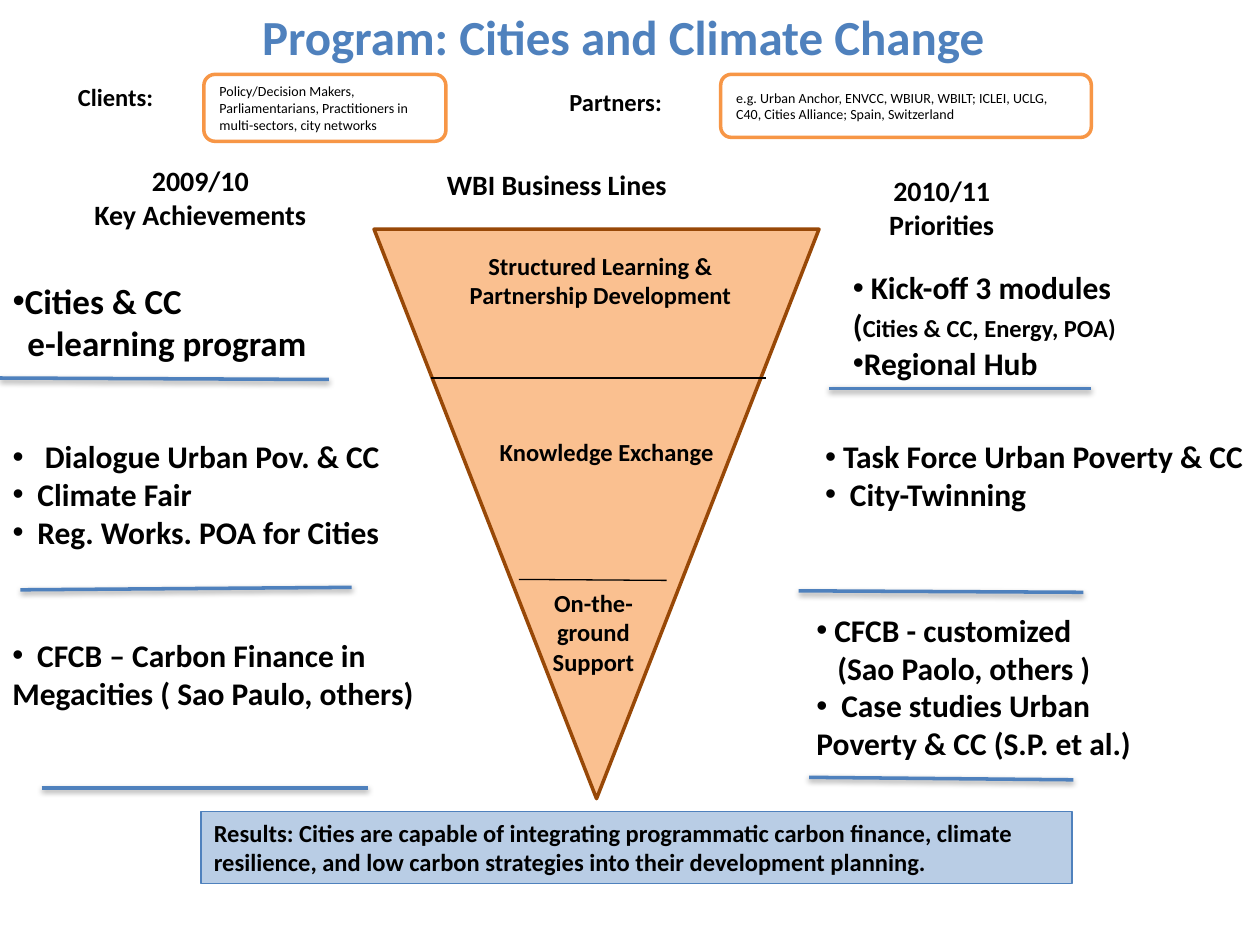
"""Build the one-slide overview of the Cities and Climate Change program."""
from lxml.etree import SubElement
from pptx import Presentation
from pptx.dml.color import RGBColor
from pptx.enum.shapes import MSO_CONNECTOR, MSO_SHAPE
from pptx.enum.text import MSO_ANCHOR, MSO_AUTO_SIZE, PP_ALIGN
from pptx.oxml.ns import qn
from pptx.util import Cm, Pt

BLACK = RGBColor(0x00, 0x00, 0x00)
WHITE = RGBColor(0xFF, 0xFF, 0xFF)
BLUE = RGBColor(0x4F, 0x81, 0xBD)
PALE_BLUE = RGBColor(0xB9, 0xCD, 0xE5)
ORANGE = RGBColor(0xF7, 0x96, 0x46)
PEACH = RGBColor(0xFA, 0xC0, 0x90)
BROWN = RGBColor(0x98, 0x48, 0x07)
FONT = "Calibri"
CENTER = PP_ALIGN.CENTER

TITLE = "Program: Cities and Climate Change"
TITLE_BOX = (5.03, 0, 16.54, 1.45)
FUNNEL_BOX = (7.54, 4.62, 8.97, 11.48)

LABELS = [
    (["Clients:"], (1.32, 1.52, 2.11, 0.84), 14, None),
    (["Partners:"], (11.23, 1.63, 2.64, 0.86), 14, None),
    (["2009/10", "Key Achievements"], (1.4, 3.18, 5.28, 1.63), 16, CENTER),
    (["WBI Business Lines"], (8.76, 3.25, 6.2, 0.94), 16, None),
    (["2010/11", "Priorities"], (16.71, 3.38, 4.55, 1.63), 16, CENTER),
    (["Structured Learning &", "Partnership Development"],
     (8.61, 4.93, 6.99, 1.45), 14, CENTER),
    (["Knowledge Exchange"], (9.73, 8.69, 5, 0.86), 14, CENTER),
    (["On-the-ground Support"], (10.57, 11.73, 2.79, 2.06), 14, CENTER),
]

PANELS = [
    ("Policy/Decision Makers, Parliamentarians, Practitioners in multi-sectors, city networks",
     (4.11, 1.5, 4.88, 1.35), MSO_SHAPE.ROUNDED_RECTANGLE, WHITE, ORANGE, 2,
     dict(size=8, bold=False, anchor=MSO_ANCHOR.MIDDLE)),
    ("e.g. Urban Anchor, ENVCC, WBIUR, WBILT; ICLEI, UCLG, C40, Cities Alliance; Spain, Switzerland",
     (14.53, 1.5, 7.47, 1.27), MSO_SHAPE.ROUNDED_RECTANGLE, WHITE, ORANGE, 2,
     dict(size=8, bold=False, anchor=MSO_ANCHOR.MIDDLE)),
    ("Results: Cities are capable of integrating programmatic carbon finance, climate "
     "resilience, and low carbon strategies into their development planning.",
     (4.06, 16.36, 17.55, 1.45), MSO_SHAPE.RECTANGLE, PALE_BLUE, BLUE, 1, dict(size=14)),
]

# Each list item: text or sized runs, whether bulleted, text indent in cm.
LISTS = [
    ([("Cities & CC", True, 0), ("e-learning program", False, 0.3)],
     (0, 5.51, 7.01, 1.96), 20),
    ([("Kick-off 3 modules", True, 0.36),
      ([("(", 18), ("Cities & CC, Energy, POA)", 14)], False, 0),
      ("Regional Hub", True, 0)],
     (16.94, 5.28, 6.48, 2.57), 18),
    ([("Dialogue Urban Pov. & CC", True, 0.65), ("Climate Fair", True, 0.5),
      ("Reg. Works. POA for Cities", True, 0.5)],
     (0, 8.69, 8.36, 2.57), 18),
    ([("Task Force Urban Poverty & CC", True, 0.36), ("City-Twinning", True, 0.5)],
     (16.38, 8.69, 9.02, 2.26), 18),
    ([("CFCB – Carbon Finance in", True, 0.5),
      ("Megacities ( Sao Paulo, others)", False, 0)],
     (0, 12.7, 8.89, 2.26), 18),
    ([("CFCB - customized", True, 0.36), ("(Sao Paolo, others )", False, 0.42),
      ("Case studies Urban", True, 0.5), ("Poverty & CC (S.P. et al.)", False, 0)],
     (16.21, 12.19, 7.92, 3.81), 18),
]

FUNNEL_LINES = [(8.69, 7.62, 15.44, 7.62), (10.46, 11.68, 13.44, 11.7)]
SECTION_LINES = [
    (0, 7.62, 6.63, 7.65), (16.71, 7.83, 22, 7.83),
    (0.41, 11.89, 7.09, 11.84), (16.1, 11.91, 21.84, 11.94),
    (0.84, 15.88, 7.42, 15.88), (16.31, 15.67, 21.64, 15.72),
]


def place(shape, box):
    shape.left, shape.top, shape.width, shape.height = map(Cm, box)


def write(shape, items, size=14, color=BLACK, bold=True, align=PP_ALIGN.LEFT,
          anchor=MSO_ANCHOR.TOP):
    frame = shape.text_frame
    frame.word_wrap = True
    frame.auto_size = MSO_AUTO_SIZE.NONE
    frame.vertical_anchor = anchor
    for index, item in enumerate(items):
        content, bulleted, indent = (item, False, 0) if isinstance(item, str) else item
        paragraph = frame.add_paragraph() if index else frame.paragraphs[0]
        paragraph.alignment = align
        paragraph.space_before = Pt(0)
        properties = paragraph._p.get_or_add_pPr()
        properties.set("marL", str(Cm(indent)))
        properties.set("indent", str(-Cm(indent) if bulleted else 0))
        if bulleted:
            SubElement(properties, qn("a:buFont"), typeface="Arial")
            SubElement(properties, qn("a:buChar"), char="•")
        else:
            SubElement(properties, qn("a:buNone"))
        for text, points in [(content, size)] if isinstance(content, str) else content:
            run = paragraph.add_run()
            run.text = text
            font = run.font
            font.name, font.size, font.bold = FONT, Pt(points), bold
            font.color.rgb = color


def add_panel(slide, kind, box, fill, line, width):
    shape = slide.shapes.add_shape(kind, *map(Cm, box))
    shape.shadow.inherit = False
    shape.fill.solid()
    shape.fill.fore_color.rgb = fill
    shape.line.color.rgb = line
    shape.line.width = Pt(width)
    return shape


def add_line(slide, ends, color, width, shadow=False):
    line = slide.shapes.add_connector(MSO_CONNECTOR.STRAIGHT, *map(Cm, ends))
    line.line.color.rgb = color
    line.line.width = Pt(width)
    effects = SubElement(line._element.spPr, qn("a:effectLst"))
    if shadow:
        outer = SubElement(effects, qn("a:outerShdw"), blurRad="40000", dist="20000",
                           dir="5400000", rotWithShape="0")
        tone = SubElement(outer, qn("a:srgbClr"), val=str(BLACK))
        SubElement(tone, qn("a:alpha"), val="38000")


def main():
    presentation = Presentation()
    presentation.slide_width, presentation.slide_height = Cm(25.4), Cm(19.05)
    slide = presentation.slides.add_slide(presentation.slide_layouts.get_by_name("Comparison"))
    title, *bodies = slide.placeholders
    place(title, TITLE_BOX)
    write(title, [TITLE], size=28, color=BLUE)

    funnel = add_panel(slide, MSO_SHAPE.ISOSCELES_TRIANGLE, FUNNEL_BOX, PEACH, BROWN, 2)
    funnel.rotation = 180
    for ends in FUNNEL_LINES:
        add_line(slide, ends, BLACK, 0.75)
    for ends in SECTION_LINES:
        add_line(slide, ends, BLUE, 2, shadow=True)
    for text, box, kind, fill, line, width, style in PANELS:
        write(add_panel(slide, kind, box, fill, line, width), [text], **style)
    for lines, box, size, align in LABELS:
        label = slide.shapes.add_textbox(*map(Cm, box))
        write(label, lines, size=size, align=align or PP_ALIGN.LEFT)
    for items, box, size in LISTS:
        body = bodies.pop(0) if bodies else slide.shapes.add_textbox(*map(Cm, box))
        place(body, box)
        write(body, items, size=size)
    presentation.save("out.pptx")


if __name__ == "__main__":
    main()
